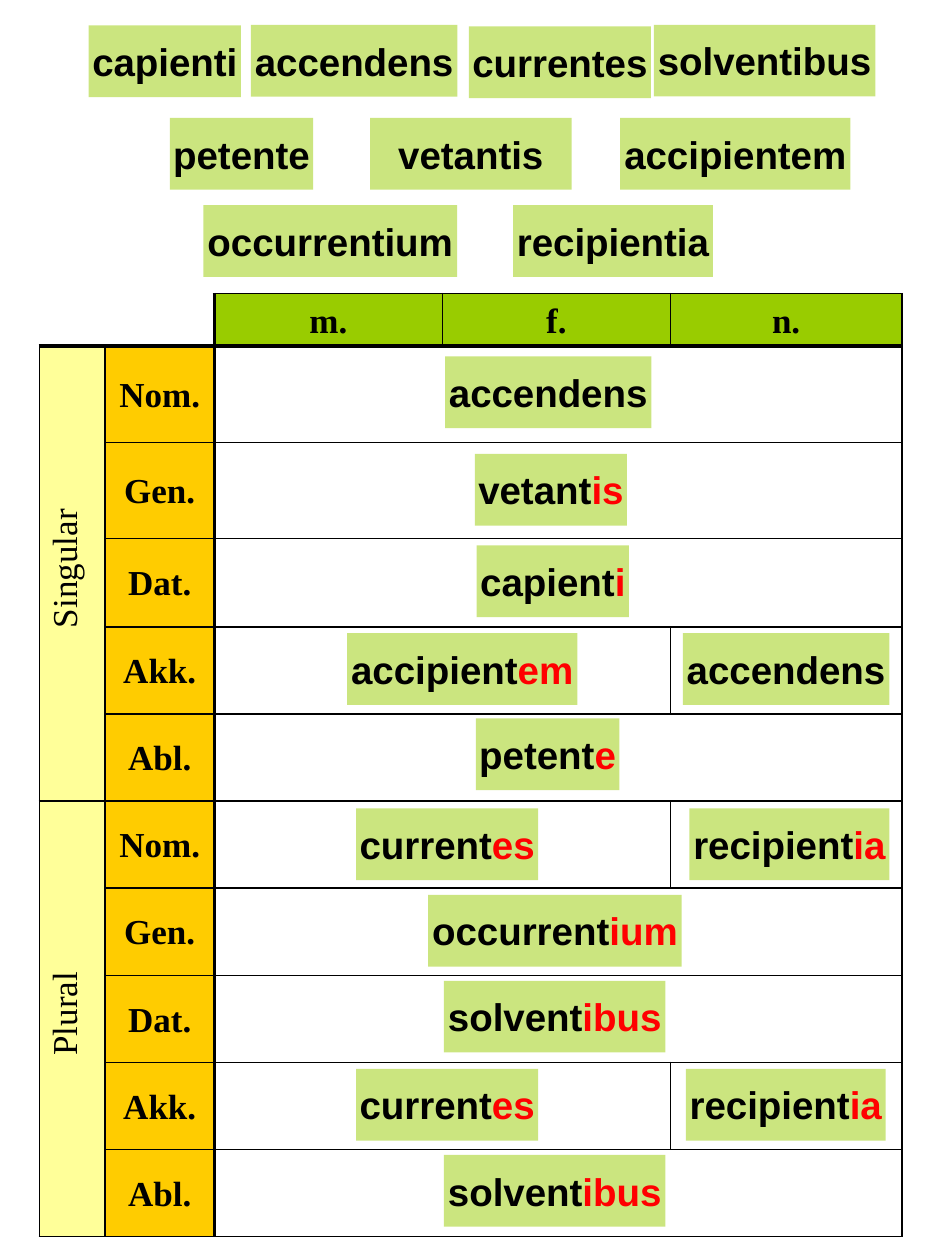
"""Build a worksheet on the declension of Latin present participles."""
from lxml.etree import SubElement
from pptx import Presentation
from pptx.dml.color import RGBColor
from pptx.enum.shapes import MSO_SHAPE
from pptx.enum.text import MSO_ANCHOR, MSO_AUTO_SIZE, PP_ALIGN
from pptx.oxml.ns import qn
from pptx.util import Pt

COLORS = {"green": "99CC00", "yellow": "FFFF99", "orange": "FFCC00",
          "black": "000000", "red": "FF0000"}


def add_run(p, text, size, font, color="black", bold=True):
    r = p.add_run()
    r.text = text
    r.font.size = Pt(size)
    r.font.name = font
    r.font.bold = bold
    r.font.color.rgb = RGBColor.from_string(COLORS[color])


def add_border(cell, side, width):
    ln = SubElement(cell._tc.get_or_add_tcPr(), qn(f"a:ln{side}"), w=str(Pt(width)))
    if width:
        fill = SubElement(ln, qn("a:solidFill"))
        SubElement(fill, qn("a:srgbClr"), val=COLORS["black"])
    else:
        SubElement(ln, qn("a:noFill"))


prs = Presentation()
prs.slide_width, prs.slide_height = Pt(540), Pt(720)
s = prs.slides.add_slide(prs.slide_layouts[6])

col_widths = [37.6, 62.4, 130.3, 130.3, 132.4]
row_heights = [30, 55, 55, 50.4] + [49.8] * 7
frame = s.shapes.add_table(len(row_heights), len(col_widths), Pt(22.5), Pt(167.8),
                           Pt(sum(col_widths)), Pt(sum(row_heights)))
table = frame.table
table.first_row = table.horz_banding = False
for col, width in zip(table.columns, col_widths):
    col.width = Pt(width)
for row, height in zip(table.rows, row_heights):
    row.height = Pt(height)

labels = {(0, 2): "m.", (0, 3): "f.", (0, 4): "n.", (1, 0): "Singular", (6, 0): "Plural"}
for i, case in enumerate(["Nom.", "Gen.", "Dat.", "Akk.", "Abl."] * 2, 1):
    labels[i, 1] = case

for i in range(len(row_heights)):
    for j in range(len(col_widths)):
        cell = table.cell(i, j)
        corner = i == 0 and j < 2
        add_border(cell, "L", 0 if corner else 2.25 if j == 2 else 1)
        add_border(cell, "R", 2.25 if j == 1 else 0 if corner else 1)
        add_border(cell, "T", 0 if corner else 2.25 if i == 1 else 1)
        add_border(cell, "B", 2.25 if i == 0 else 1)
        if (i, j) not in labels:
            cell.fill.background()
            continue
        color = "green" if i == 0 else "yellow" if j == 0 else "orange"
        cell.fill.solid()
        cell.fill.fore_color.rgb = RGBColor.from_string(COLORS[color])
        cell.vertical_anchor = MSO_ANCHOR.MIDDLE
        cell.margin_left = cell.margin_right = Pt(4.3)
        cell.margin_top = cell.margin_bottom = Pt(2.2)
        p = cell.text_frame.paragraphs[0]
        p.alignment = PP_ALIGN.CENTER
        p.line_spacing = 1.07
        add_run(p, labels[i, j], 20, "Times New Roman", bold=j > 0)
        if j == 0:
            cell._tc.get_or_add_tcPr().set("vert", "vert270")
            p._p.get_or_add_pPr().set("marL", str(Pt(5.7)))

table.cell(0, 0).merge(table.cell(0, 1))
for i in (1, 6):
    table.cell(i, 0).merge(table.cell(i + 4, 0))
for i in range(1, len(row_heights)):
    table.cell(i, 2).merge(table.cell(i, 3 if i in (4, 6, 9) else 4))

word_widths = {"capienti": 87, "accendens": 118, "currentes": 104, "solventibus": 126.6,
               "petente": 82, "vetantis": 87, "accipientem": 131.6,
               "occurrentium": 145, "recipientia": 114.2}
cards = [
    (50.7, 14.6, "capienti", ""), (143.4, 14.3, "accendens", ""),
    (268, 15.1, "currentes", ""), (373.6, 14.2, "solventibus", ""),
    (97, 67.4, "petente", ""), (211.5, 67.4, "vetantis", ""),
    (354.4, 67.4, "accipientem", ""),
    (116.2, 117.3, "occurrentium", ""), (293.2, 117.3, "recipientia", ""),
    (254.3, 203.7, "accendens", ""),
    (271.3, 259.4, "vetant", "is"),
    (272.4, 311.7, "capient", "i"),
    (198.3, 361.8, "accipient", "em"), (390.2, 361.8, "accendens", ""),
    (271.9, 410.5, "petent", "e"),
    (203.5, 462, "current", "es"), (394, 462, "recipient", "ia"),
    (244.6, 511.4, "occurrent", "ium"),
    (253.7, 560.5, "solvent", "ibus"),
    (203.5, 610.8, "current", "es"), (391.9, 610.8, "recipient", "ia"),
    (253.7, 660, "solvent", "ibus"),
]
for x, y, stem, ending in cards:
    wide = stem == "vetantis"
    width = 115.2 if wide else word_widths[stem + ending]
    sp = s.shapes.add_shape(MSO_SHAPE.RECTANGLE, Pt(x), Pt(y), Pt(width), Pt(41))
    sp.shadow.inherit = False
    sp.line.fill.background()
    sp.fill.solid()
    sp.fill.fore_color.rgb = RGBColor.from_string(COLORS["green"])
    clr = sp._element.spPr.find(qn("a:solidFill")).find(qn("a:srgbClr"))
    SubElement(clr, qn("a:alpha"), val="50000")
    tf = sp.text_frame
    tf.word_wrap = wide
    tf.auto_size = MSO_AUTO_SIZE.SHAPE_TO_FIT_TEXT
    tf.vertical_anchor = MSO_ANCHOR.TOP
    tf.margin_left = tf.margin_right = Pt(1.8)
    tf.margin_top = tf.margin_bottom = Pt(7.2)
    p = tf.paragraphs[0]
    p.alignment = PP_ALIGN.CENTER
    add_run(p, stem, 22, "Arial")
    if ending:
        add_run(p, ending, 22, "Arial", "red")

prs.save("out.pptx")
